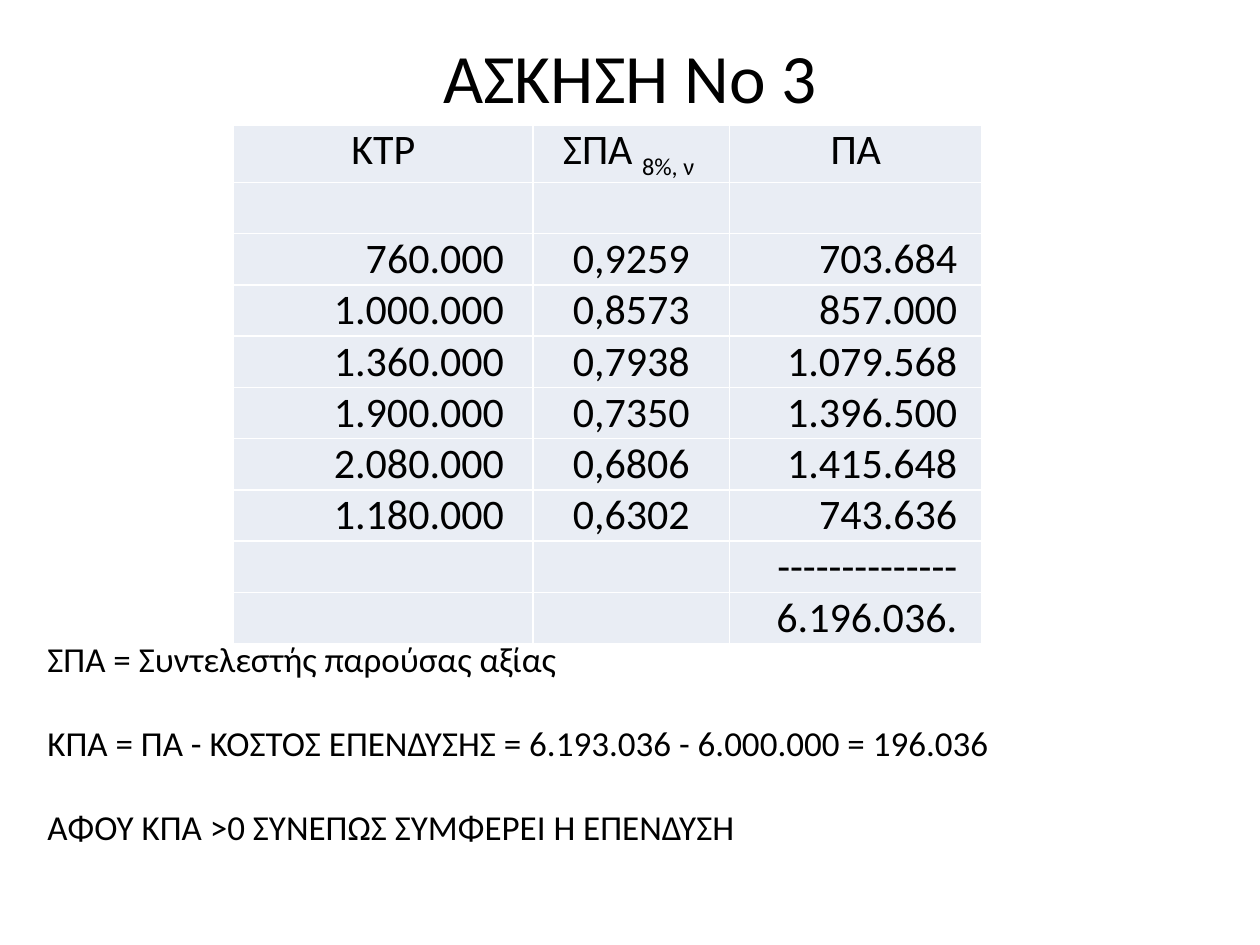
from pptx import Presentation
from pptx.dml.color import RGBColor
from pptx.enum.text import MSO_ANCHOR, PP_ALIGN
from pptx.util import Pt

LEFT, CENTER, RIGHT = PP_ALIGN.LEFT, PP_ALIGN.CENTER, PP_ALIGN.RIGHT
TOP, MIDDLE = MSO_ANCHOR.TOP, MSO_ANCHOR.MIDDLE
COLORS = {"text": "000000", "cell": "E9EDF4"}
FONT = "Calibri"
SUBSCRIPT = "-25000"

HEADER = ["ΚΤΡ", "ΣΠΑ ", "ΠΑ"]
DISCOUNT_TERMS = "8%, ν "
CASH_FLOWS = [
    ["", "", ""],
    ["760.000", "0,9259", "703.684"],
    ["1.000.000", "0,8573", "857.000"],
    ["1.360.000", "0,7938", "1.079.568"],
    ["1.900.000", "0,7350", "1.396.500"],
    ["2.080.000", "0,6806", "1.415.648"],
    ["1.180.000", "0,6302", "743.636"],
    ["", "", "--------------"],
    ["", "", "6.196.036."],
]
CONCLUSIONS = [
    "ΣΠΑ = Συντελεστής παρούσας αξίας",
    "ΚΠΑ = ΠΑ - ΚΟΣΤΟΣ ΕΠΕΝΔΥΣΗΣ = 6.193.036 - 6.000.000 = 196.036",
    "ΑΦΟΥ ΚΠΑ >0 ΣΥΝΕΠΩΣ ΣΥΜΦΕΡΕΙ Η ΕΠΕΝΔΥΣΗ",
]


def apply_format(target, values):
    for name, value in values.items():
        setattr(target, name, value)


class SlideBuilder:
    def __init__(self, slide):
        self.slide = slide

    def run(self, paragraph, text, size):
        run = paragraph.add_run()
        run.text = text
        apply_format(run.font, {"name": FONT, "size": Pt(size), "bold": False})
        run.font.color.rgb = RGBColor.from_string(COLORS["text"])
        return run

    def text(self, box, lines, size, align=LEFT, anchor=TOP, gap=0):
        frame = self.slide.shapes.add_textbox(*map(Pt, box)).text_frame
        apply_format(frame, {"word_wrap": True, "vertical_anchor": anchor})
        for index, line in enumerate(lines):
            paragraph = frame.add_paragraph() if index else frame.paragraphs[0]
            spacing = Pt(gap if index else 0)
            apply_format(paragraph, {"alignment": align, "space_before": spacing})
            self.run(paragraph, line, size)

    def cell(self, cell, text, size, align, right_margin):
        apply_format(cell, {
            "margin_left": Pt(5), "margin_right": Pt(right_margin),
            "margin_top": 0, "margin_bottom": 0,
        })
        cell.fill.solid()
        cell.fill.fore_color.rgb = RGBColor.from_string(COLORS["cell"])
        paragraph = cell.text_frame.paragraphs[0]
        paragraph.alignment = align
        if text:
            self.run(paragraph, text, size)

    def table(self, origin, widths, heights, rows, size, aligns, right_margins):
        box = (*origin, sum(widths), sum(heights))
        table = self.slide.shapes.add_table(
            len(rows), len(widths), *map(Pt, box)).table
        apply_format(table, {"first_row": False, "horz_banding": False})
        for column, width in zip(table.columns, widths):
            column.width = Pt(width)
        for r, (row, height) in enumerate(zip(rows, heights)):
            table.rows[r].height = Pt(height)
            for c, text in enumerate(row):
                align, margin = (aligns[c], right_margins[c]) if r else (CENTER, 5)
                self.cell(table.cell(r, c), text, size, align, margin)
        return table


def main():
    presentation = Presentation()
    apply_format(presentation, {"slide_width": Pt(720), "slide_height": Pt(540)})
    builder = SlideBuilder(
        presentation.slides.add_slide(presentation.slide_layouts[6]))

    builder.text((54, 21, 612, 45), ["ΑΣΚΗΣΗ Νο 3"], 39.6, CENTER, MIDDLE)
    present_values = builder.table(
        (133.5, 71.5), (171, 112.5, 144), [32.5] + [29.3] * len(CASH_FLOWS),
        [HEADER] + CASH_FLOWS, 24, (RIGHT, CENTER, RIGHT), (16.5, 5, 14))
    factor_heading = present_values.cell(0, 1).text_frame.paragraphs[0]
    terms = builder.run(factor_heading, DISCOUNT_TERMS, 24)
    terms.font._element.set("baseline", SUBSCRIPT)
    builder.text((20, 361, 669, 128), CONCLUSIONS, 20, gap=24)

    presentation.save("out.pptx")


if __name__ == "__main__":
    main()
